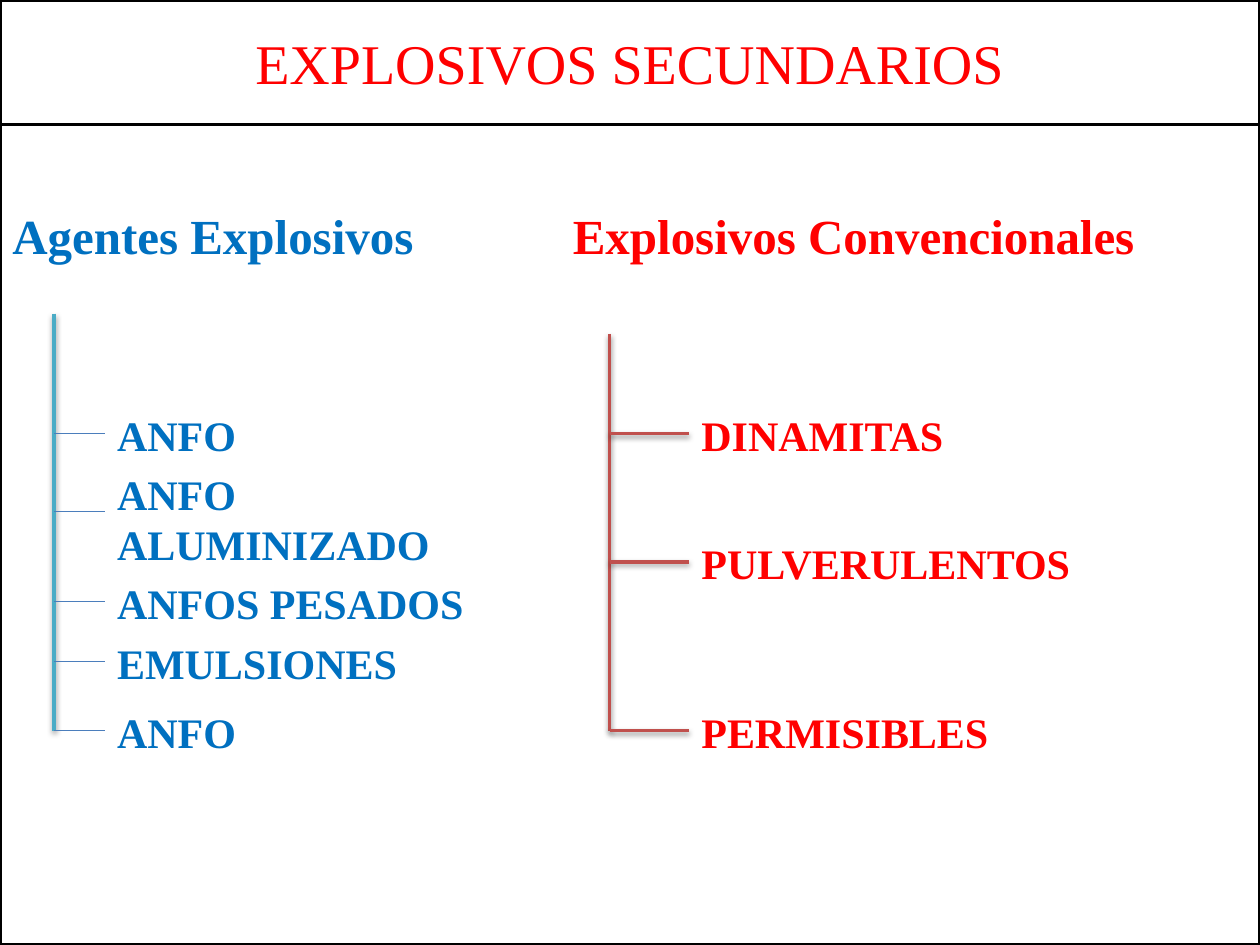
import pptx
import pptx.util
import pptx.oxml
import pptx.oxml.ns
import pptx.dml.color
import pptx.enum.shapes
import pptx.enum.text

Cm = pptx.util.Cm
Pt = pptx.util.Pt
RGBColor = pptx.dml.color.RGBColor
ALIGN = pptx.enum.text.PP_ALIGN
ANCHOR = pptx.enum.text.MSO_ANCHOR

BLACK = RGBColor(0, 0, 0)
WHITE = RGBColor(255, 255, 255)
RED = RGBColor(255, 0, 0)
BLUE = RGBColor(0, 0x70, 0xC0)
TEAL = RGBColor(0x4B, 0xAC, 0xC6)
STEEL = RGBColor(0x4B, 0x7E, 0xBC)
BRICK = RGBColor(0xC0, 0x50, 0x4D)

SHADOW = (
    '<a:outerShdw blurRad="39370" dist="20320" dir="5400000" rotWithShape="0">'
    '<a:srgbClr val="000000"><a:alpha val="38000"/></a:srgbClr></a:outerShdw>'
)
AGENTS = [
    ("ANFO", 8.74, 5.79, 1),
    ("ANFO ALUMINIZADO", 10.31, 7.19, 2),
    ("ANFOS PESADOS", 12.12, 8.71, 1),
    ("EMULSIONES", 13.34, 6.6, 1),
    ("ANFO", 14.73, 4.39, 1),
]
COMMON = [
    ("DINAMITAS", 8.74, 6.4, 1),
    ("PULVERULENTOS", 11.33, 8.2, 1),
    ("PERMISIBLES", 14.73, 6.4, 1),
]


def add_xml(parent, tag, inner):
    """Append a drawing element with the given content."""
    space = pptx.oxml.ns.nsdecls("a")
    parent.append(pptx.oxml.parse_xml(f"<a:{tag} {space}>{inner}</a:{tag}>"))


def add_run(para, text, size, color, bold=True):
    """Add one styled run."""
    run = para.add_run()
    run.text = text
    run.font.name = "Times New Roman"
    run.font.size = Pt(size)
    run.font.bold = bold
    run.font.color.rgb = color


def add_line(slide, start, end, color, width, shade):
    """Draw a straight line, with or without a soft shadow."""
    kind = pptx.enum.shapes.MSO_CONNECTOR.STRAIGHT
    line = slide.shapes.add_connector(kind, *map(Cm, start + end))
    line.line.color.rgb = color
    line.line.width = Pt(width)
    add_xml(line._element.spPr, "effectLst", SHADOW if shade else "")
    return line


def add_panel(slide, left, top, width, height):
    """Draw a framed white panel and return its text frame."""
    kind = pptx.enum.shapes.MSO_SHAPE.RECTANGLE
    panel = slide.shapes.add_shape(kind, Cm(left), Cm(top), Cm(width), Cm(height))
    panel.shadow.inherit = False
    panel.fill.solid()
    panel.fill.fore_color.rgb = WHITE
    panel.line.color.rgb = BLACK
    panel.line.width = Pt(2)
    panel.text_frame.word_wrap = True
    return panel.text_frame


def add_title(slide, left, top, width, height):
    """Place the title panel."""
    frame = add_panel(slide, left, top, width, height)
    frame.vertical_anchor = ANCHOR.MIDDLE
    para = frame.paragraphs[0]
    para.alignment = ALIGN.CENTER
    add_run(para, "EXPLOSIVOS SECUNDARIOS", 32, RED, False)


def add_body(slide, left, top, width, height):
    """Place the body panel with its two headings on one line."""
    frame = add_panel(slide, left, top, width, height)
    frame.vertical_anchor = ANCHOR.TOP
    frame.margin_top = Cm(1.63)
    para = frame.paragraphs[0]
    para.alignment = ALIGN.LEFT
    stop = Cm(11.3)
    add_xml(para._p.get_or_add_pPr(), "tabLst", f'<a:tab pos="{stop}" algn="l"/>')
    add_run(para, "Agentes Explosivos\t", 28, BLUE)
    add_run(para, "Explosivos Convencionales", 28, RED)


def add_tree(slide, left, top, reach, items, color, trunk, twig, width, shade):
    """Draw a trunk with one labelled branch per item."""
    add_line(slide, (left, top), (left, items[-1][1]), trunk, 2, shade=True)
    for text, level, wide, rows in items:
        line = add_line(slide, (left, level), (left + reach, level), twig, width, shade)
        rise, tall = (0.61, 1.22) if rows == 1 else (0.99, 2.31)
        box = slide.shapes.add_textbox(
            Cm(left + reach), Cm(level - rise), Cm(wide), Cm(tall)
        )
        box.text_frame.word_wrap = True
        add_run(box.text_frame.paragraphs[0], text, 24, color)
        if rows == 1:
            line.end_connect(box, 1)


def main():
    """Build the slide and save it."""
    deck = pptx.Presentation()
    deck.slide_width, deck.slide_height = Cm(25.4), Cm(19.05)
    slide = deck.slides.add_slide(deck.slide_layouts[6])
    add_title(slide, 0, 0, 25.4, 2.51)
    add_body(slide, 0, 2.51, 25.4, 16.54)
    add_tree(slide, 1.09, 6.32, 1.02, AGENTS, BLUE, TEAL, STEEL, 0.75, False)
    add_tree(slide, 12.29, 6.73, 1.6, COMMON, RED, BRICK, BRICK, 2, True)
    deck.save("out.pptx")


if __name__ == "__main__":
    main()
